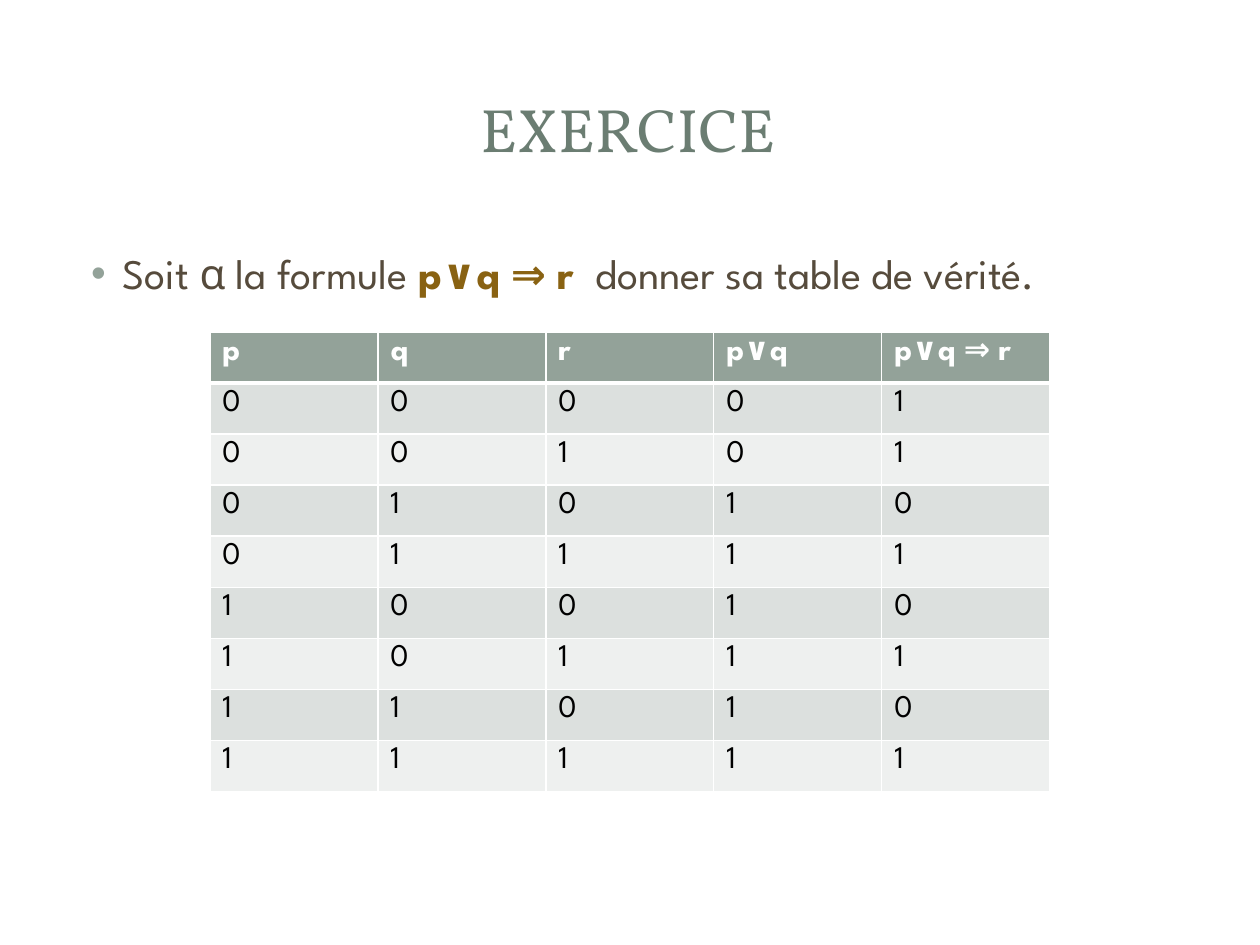
"""Build the exercise slide with the truth table of p∨q ⇒ r."""
from dataclasses import dataclass
from itertools import product

from lxml import etree
from pptx import Presentation
from pptx.dml.color import RGBColor
from pptx.enum.shapes import MSO_SHAPE
from pptx.enum.text import MSO_ANCHOR, PP_ALIGN
from pptx.oxml.ns import qn
from pptx.util import Cm, Pt

CENTER = PP_ALIGN.CENTER
LEFT = PP_ALIGN.LEFT
MIDDLE = MSO_ANCHOR.MIDDLE
TOP = MSO_ANCHOR.TOP
RECTANGLE = MSO_SHAPE.RECTANGLE
ROUNDED = MSO_SHAPE.ROUNDED_RECTANGLE
TITLE_ONLY = 5


@dataclass(frozen=True)
class Theme:
    heading_font: str = "Vollkorn"
    body_font: str = "League Spartan"
    heading: str = "6B7D72"
    body: str = "564B3C"
    formula: str = "896212"
    accent: str = "93A299"
    bands: tuple = ("DCE0DE", "EEF0EF")
    white: str = "FFFFFF"
    black: str = "000000"
    heading_size: int = 35
    body_size: int = 24
    cell_size: int = 18


theme = Theme()


def add_span(para, text, color, name, size, bold=False):
    span = para.add_run()
    span.text = text
    for attribute, value in {"name": name, "size": Pt(size), "bold": bold}.items():
        setattr(span.font, attribute, value)
    span.font.color.rgb = RGBColor.from_string(color)


def add_border(cell, side, width):
    line = etree.SubElement(cell._tc.get_or_add_tcPr(), qn(f"a:ln{side}"), w=str(Pt(width)))
    fill = etree.SubElement(line, qn("a:solidFill"))
    etree.SubElement(fill, qn("a:srgbClr"), val=theme.white)


deck = Presentation()
deck.slide_width, deck.slide_height = Cm(25.4), Cm(19.05)
page = deck.slides.add_slide(deck.slide_layouts[TITLE_ONLY])

for kind, area, opacity in (
    (ROUNDED, (0.25, 0.28, 24.89, 18.8), 100),
    (RECTANGLE, (0.76, 0.76, 23.88, 3.68), 83),
    (RECTANGLE, (1.04, 1.04, 23.29, 3.1), 100),
):
    panel = page.shapes.add_shape(kind, *map(Cm, area))
    panel.shadow.inherit = False
    panel.line.fill.background()
    panel.fill.solid()
    panel.fill.fore_color.rgb = RGBColor.from_string(theme.white)
    if kind == ROUNDED:
        panel.adjustments[0] = 0.02
    if opacity < 100:
        color = panel._element.spPr.find(qn("a:solidFill"))[0]
        etree.SubElement(color, qn("a:alpha"), val=str(opacity * 1000))

title = page.shapes.title
page.shapes._spTree.append(title._element)
for attribute, value in {"left": 1.19, "top": 1.14, "width": 22.94, "height": 2.9}.items():
    setattr(title, attribute, Cm(value))
title.text_frame.vertical_anchor = MIDDLE
para = title.text_frame.paragraphs[0]
para.alignment = CENTER
add_span(para, "EXERCICE", theme.heading, theme.heading_font, theme.heading_size)

box = page.shapes.add_textbox(Cm(1.27), Cm(4.87), Cm(22.86), Cm(2.06))
for attribute, value in {"word_wrap": True, "vertical_anchor": TOP}.items():
    setattr(box.text_frame, attribute, value)
para = box.text_frame.paragraphs[0]
for attribute, value in {"alignment": LEFT, "space_before": Pt(4.8)}.items():
    setattr(para, attribute, value)
properties = para._p.get_or_add_pPr()
properties.set("marL", str(Cm(0.96)))
properties.set("indent", str(Cm(-0.64)))
bullet_color = etree.SubElement(properties, qn("a:buClr"))
etree.SubElement(bullet_color, qn("a:srgbClr"), val=theme.accent)
etree.SubElement(properties, qn("a:buFont"), typeface="Arial")
etree.SubElement(properties, qn("a:buChar"), char="•")
for text, color, bold in (
    ("Soit α la formule ", theme.body, False),
    ("p∨q ⇒ r ", theme.formula, True),
    (" donner sa table de vérité.", theme.body, False),
):
    add_span(para, text, color, theme.body_font, theme.body_size, bold)

rows = [("p", "q", "r", "p∨q", "p∨q ⇒ r")]
for p, q, r in product((0, 1), repeat=3):
    either = p | q
    rows.append((p, q, r, either, int(not either or r)))

table = page.shapes.add_table(
    len(rows), len(rows[0]), Cm(4.23), Cm(6.69), Cm(16.93), Cm(9.27)
).table
for row in table.rows:
    row.height = Cm(1.03)
for row_index, values in enumerate(rows):
    header = row_index == 0
    fill_color = theme.accent if header else theme.bands[(row_index - 1) % 2]
    text_color = theme.white if header else theme.black
    widths = {"L": 1, "R": 1, "T": 3 if row_index == 1 else 1, "B": 3 if header else 1}
    for column_index, value in enumerate(values):
        cell = table.cell(row_index, column_index)
        for side, width in widths.items():
            add_border(cell, side, width)
        cell.fill.solid()
        cell.fill.fore_color.rgb = RGBColor.from_string(fill_color)
        add_span(cell.text_frame.paragraphs[0], str(value), text_color,
                 theme.body_font, theme.cell_size, header)

deck.save("out.pptx")
